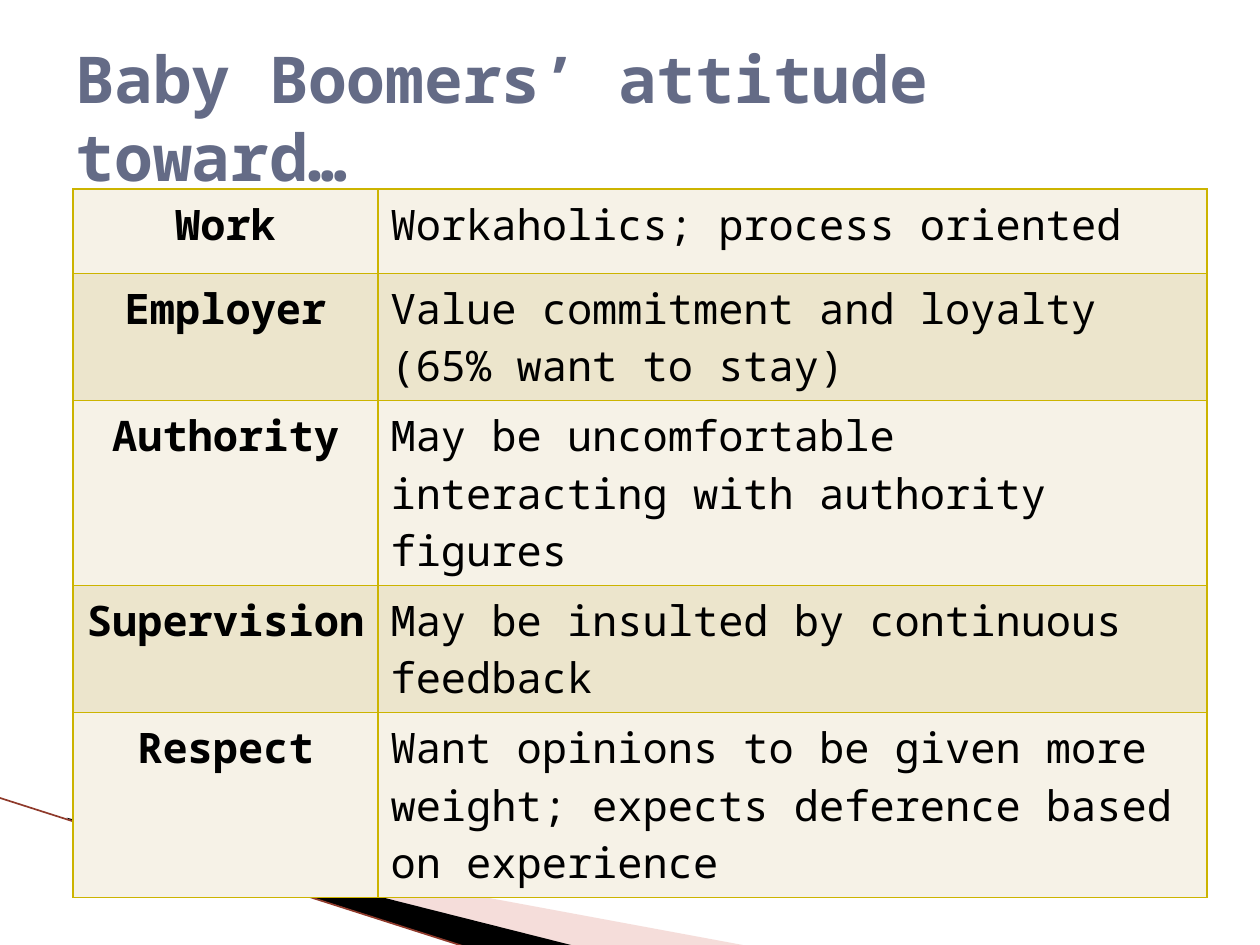
from lxml import etree
from pptx import Presentation
from pptx.dml.color import RGBColor
from pptx.enum.shapes import MSO_CONNECTOR
from pptx.enum.text import MSO_ANCHOR, MSO_AUTO_SIZE, PP_ALIGN
from pptx.oxml import parse_xml
from pptx.oxml.ns import nsdecls, qn
from pptx.util import Inches, Pt

FONT = "Noto Sans Mono"
COLORS = {
    "title": "646B86",
    "text": "000000",
    "light_row": "F6F2E7",
    "dark_row": "ECE5CC",
    "border": "CCB400",
    "pink": "E7ACA4",
    "black": "000000",
    "edge": "8F3A2B",
}
ATTITUDES = [
    ("Work", "Workaholics; process oriented", 0.67),
    ("Employer", "Value commitment and loyalty (65% want to stay)", 0.92),
    ("Authority", "May be uncomfortable interacting with authority figures", 0.92),
    ("Supervision", "May be insulted by continuous feedback", 0.92),
    ("Respect", "Want opinions to be given more weight; expects deference based on experience", 1.33),
]
SWOOSHES = [
    ("pink", 40, [(0.55, 6.51), (5.95, 7.51), (4.56, 7.51), (0.55, 6.5)]),
    ("black", 100, [(0.53, 6.49), (4.57, 7.51), (3.72, 7.52), (0.54, 6.5)]),
]


def color(name):
    return RGBColor.from_string(COLORS[name])


def style_font(font, size, color_name, bold):
    values = {"name": FONT, "size": Pt(size), "bold": bold}
    for attribute, value in values.items():
        setattr(font, attribute, value)
    font.color.rgb = color(color_name)


deck = Presentation()
deck.slide_width, deck.slide_height = Inches(10), Inches(7.5)
page = deck.slides.add_slide(deck.slide_layouts[5])

# Corner swooshes
for name, opacity, corners in SWOOSHES:
    points = [(Inches(x), Inches(y)) for x, y in corners]
    builder = page.shapes.build_freeform(*points[0])
    builder.add_line_segments(points[1:], close=True)
    swoosh = builder.convert_to_shape()
    swoosh.shadow.inherit = False
    swoosh.fill.solid()
    swoosh.fill.fore_color.rgb = color(name)
    swoosh.line.fill.background()
    if opacity < 100:
        fill_color = swoosh.fill._xPr.find(f".//{qn('a:srgbClr')}")
        etree.SubElement(fill_color, qn("a:alpha"), val=str(opacity * 1000))

edge = page.shapes.add_connector(
    MSO_CONNECTOR.STRAIGHT, Inches(-0.01), Inches(6.33), Inches(3.71), Inches(7.52)
)
edge.line.color.rgb = color("edge")
edge.line.width = Pt(0.95)
etree.SubElement(edge._element.spPr, qn("a:effectLst"))

# Attitude table
table = page.shapes.add_table(
    len(ATTITUDES), 2, Inches(0.58), Inches(1.5), Inches(9), Inches(4.76)
).table
table.first_row = table.horz_banding = False
for column, width in zip(table.columns, (2.42, 6.58)):
    column.width = Inches(width)

for row_index, (topic, attitude, height) in enumerate(ATTITUDES):
    table.rows[row_index].height = Inches(height)
    for column_index, text in enumerate((topic, attitude)):
        is_topic = column_index == 0
        cell = table.cell(row_index, column_index)
        para = cell.text_frame.paragraphs[0]
        para.alignment = PP_ALIGN.CENTER if is_topic else PP_ALIGN.LEFT
        span = para.add_run()
        span.text = text
        style_font(span.font, 24, "text", is_topic)
        properties = cell._tc.get_or_add_tcPr()
        for side in ("lnL", "lnR", "lnT", "lnB"):
            properties.append(parse_xml(
                f'<a:{side} {nsdecls("a")} w="{Pt(1)}"><a:solidFill>'
                f'<a:srgbClr val="{COLORS["border"]}"/></a:solidFill></a:{side}>'
            ))
        cell.fill.solid()
        cell.fill.fore_color.rgb = color("dark_row" if row_index % 2 else "light_row")

# Title
title = page.shapes.title
title.left, title.top = Inches(0.5), Inches(0.3)
title.width, title.height = Inches(9), Inches(1.25)
frame = title.text_frame
frame.word_wrap = True
frame.auto_size = MSO_AUTO_SIZE.NONE
frame.vertical_anchor = MSO_ANCHOR.MIDDLE
para = frame.paragraphs[0]
para.alignment = PP_ALIGN.LEFT
para.line_spacing = 1.0
span = para.add_run()
span.text = "Baby Boomers’ attitude toward…"
style_font(span.font, 36.9, "title", True)

deck.save("out.pptx")
